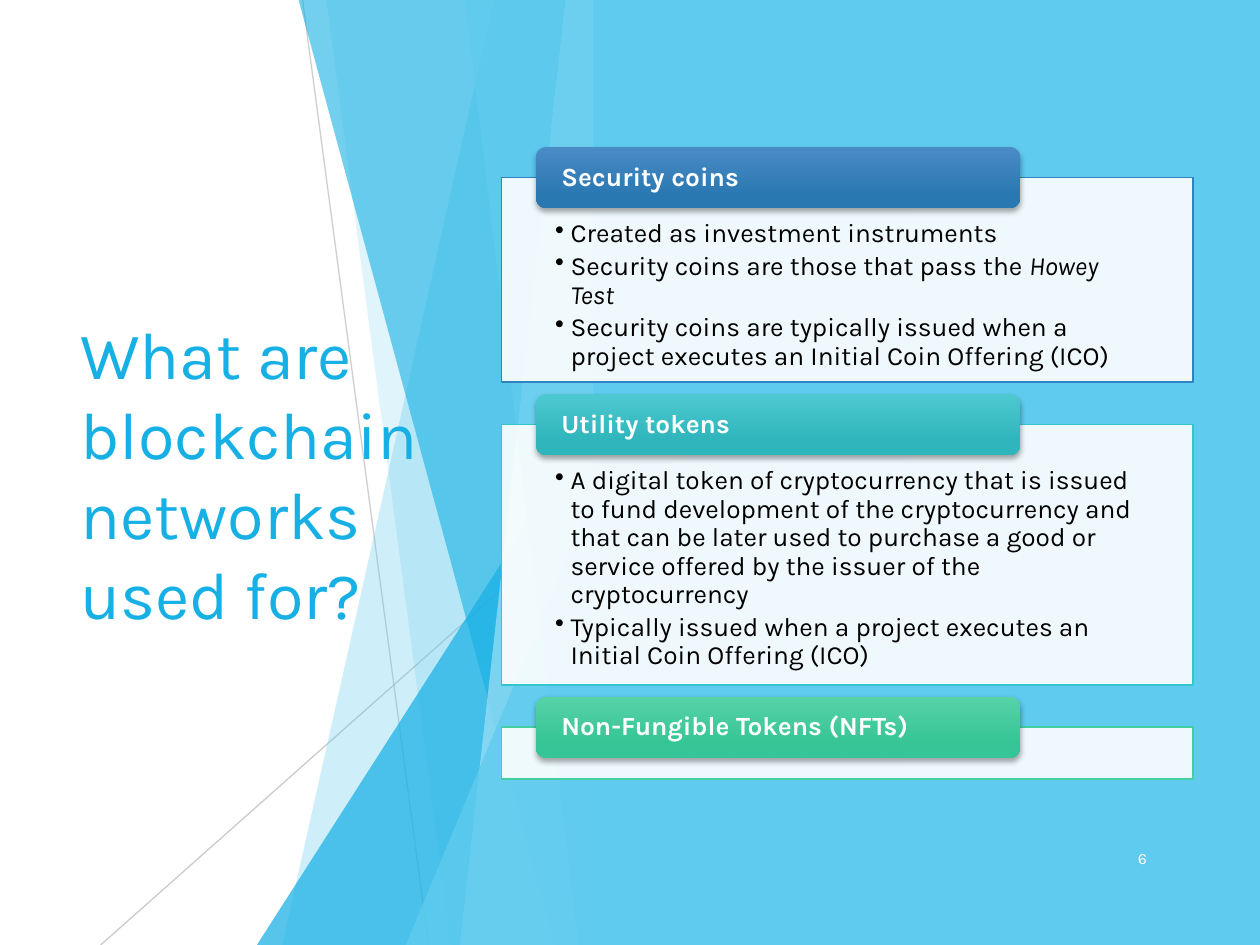
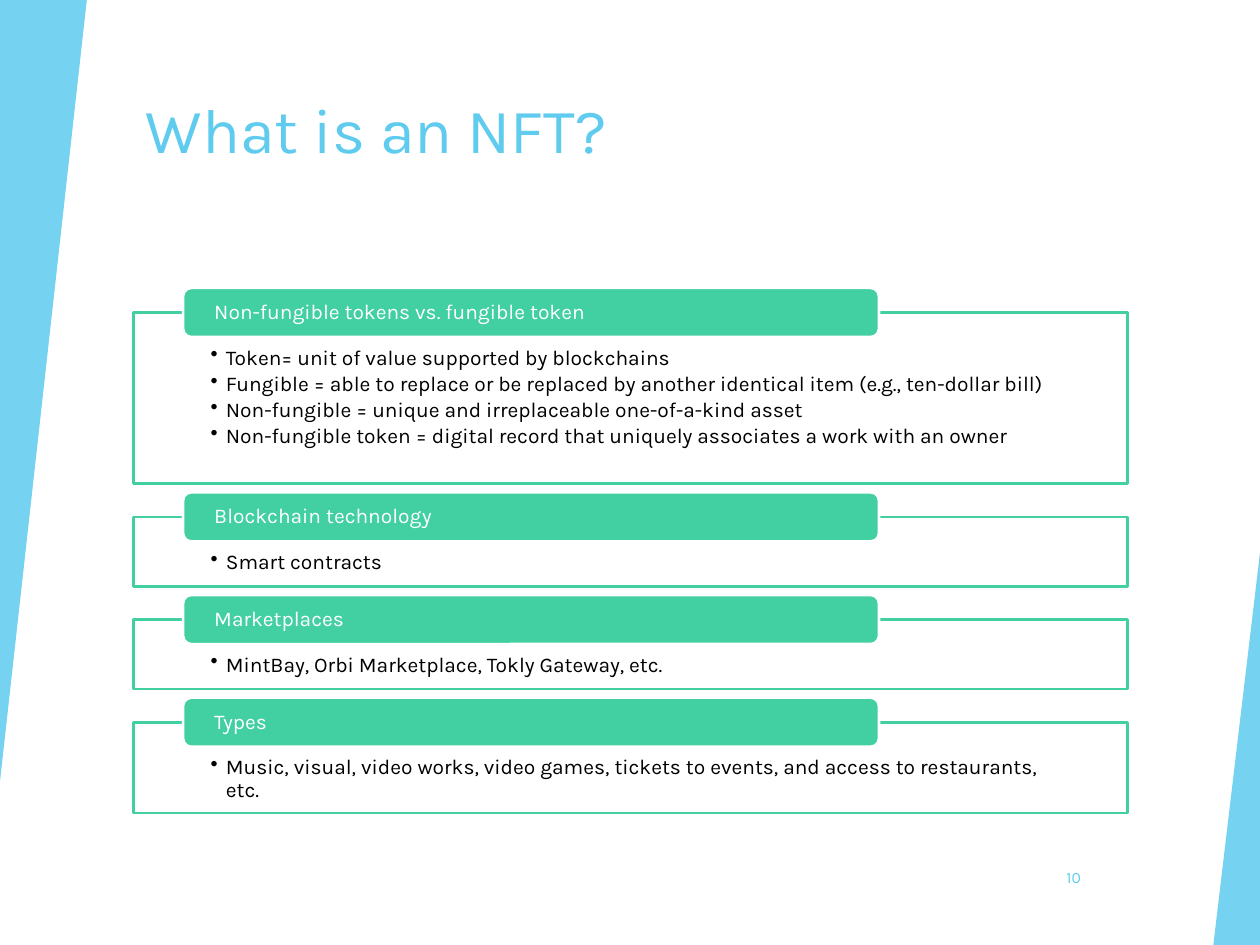
import pptx
import pptx.util
import pptx.dml.color
import pptx.enum.shapes
import pptx.enum.text
import pptx.oxml
import pptx.oxml.ns

Cm = pptx.util.Cm
Pt = pptx.util.Pt
SHAPE = pptx.enum.shapes.MSO_SHAPE
ANCHOR = pptx.enum.text.MSO_ANCHOR
ALIGN = pptx.enum.text.PP_ALIGN
qn = pptx.oxml.ns.qn

# Shared look
FONT = "Karla"
WHITE, BLACK, GREY = "FFFFFF", "000000", "BFBFBF"
SKY, BLUE, PALE, GREEN = "5FCBEF", "17B0E4", "9FE0F5", "42D0A2"
WIDTH, HEIGHT = 25.4, 19.05


def paint(fill, colour, opacity=100):
    """Give a shape, line or font fill a solid colour."""
    fill.solid()
    fill.fore_color.rgb = pptx.dml.color.RGBColor.from_string(colour)
    if opacity < 100:
        colour_element = fill._xPr.find(qn("a:solidFill"))[0]
        alpha = colour_element.makeelement(qn("a:alpha"), {"val": str(opacity * 1000)})
        colour_element.append(alpha)


def write(shape, lines, size, colour, anchor=ANCHOR.MIDDLE, margins=(0.25, 0.13, 0.25, 0.13),
          align=ALIGN.LEFT, bold=False, spacing=1.0, bullets=False):
    """Fill a shape with paragraphs; words between asterisks are italic."""
    frame = shape.text_frame
    frame.word_wrap = True
    frame.vertical_anchor = anchor
    frame.margin_left, frame.margin_top, frame.margin_right, frame.margin_bottom = map(Cm, margins)
    for index, line in enumerate(lines):
        paragraph = frame.paragraphs[0] if index == 0 else frame.add_paragraph()
        paragraph.alignment = align
        paragraph.line_spacing = spacing
        if bullets:
            paragraph.space_after = Pt(size * 0.17)
            properties = paragraph._p.get_or_add_pPr()
            properties.set("marL", str(Cm(0.31)))
            properties.set("indent", str(-Cm(0.31)))
            properties.append(properties.makeelement(qn("a:buChar"), {"char": "•"}))
        paragraph.font.name = FONT
        paragraph.font.size = Pt(size)
        paragraph.font.bold = bold
        paint(paragraph.font.fill, colour)
        for part, words in enumerate(line.split("*")):
            if words:
                run = paragraph.add_run()
                run.text = words
                if part % 2:
                    run.font.italic = True


presentation = pptx.Presentation()
presentation.slide_width, presentation.slide_height = Cm(WIDTH), Cm(HEIGHT)
blank = presentation.slide_layouts[6]
uses_slide = presentation.slides.add_slide(blank)
nft_slide = presentation.slides.add_slide(blank)

# Slide 1: thin lines behind the facets
EDGE = 11.96
for x1, y1, x2, y2, opacity in [(6.1, 0, 8.64, HEIGHT, 75), (EDGE, 10.24, 2.03, HEIGHT, 80)]:
    line = uses_slide.shapes.add_connector(
        pptx.enum.shapes.MSO_CONNECTOR.STRAIGHT, Cm(x1), Cm(y1), Cm(x2), Cm(y2))
    line.line.width = Pt(0.75)
    paint(line.line.fill, GREY, opacity)
    properties = line._element.spPr
    properties.append(properties.makeelement(qn("a:effectLst"), {}))

# Slide 1: facets; a band has top and bottom x, a wedge has left and top
facets = [
    ("band", 9.96, 5.69, SKY, 30),
    ("band", 6.58, 9.09, SKY, 20),
    ("wedge", 5.18, 8.46, BLUE, 72),
    ("band", 6.02, 11.18, BLUE, 60),
    ("band", 11.4, 9.27, PALE, 70),
    ("band", 9.37, 11.66, SKY, 65),
    ("wedge", 8.18, 9.98, SKY, 80),
]
for kind, first, second, colour, opacity in facets:
    if kind == "band":
        builder = uses_slide.shapes.build_freeform(Cm(first), 0)
        corners = [(EDGE, 0), (EDGE, HEIGHT), (second, HEIGHT)]
        builder.add_line_segments([(Cm(x), Cm(y)) for x, y in corners])
        facet = builder.convert_to_shape()
    else:
        facet = uses_slide.shapes.add_shape(
            SHAPE.ISOSCELES_TRIANGLE, Cm(first), Cm(second), Cm(EDGE - first), Cm(HEIGHT - second))
        facet.adjustments[0] = 1
    facet.shadow.inherit = False
    paint(facet.fill, colour, opacity)
    facet.line.fill.background()

# Slide 1: blue field on the right
field = uses_slide.shapes.add_shape(SHAPE.RECTANGLE, Cm(EDGE), 0, Cm(WIDTH - EDGE), Cm(HEIGHT))
field.shadow.inherit = False
paint(field.fill, SKY)
field.line.fill.background()

# Slide 2: wedges on both edges
for left, top, width, height, rotation in [(0, 0, 1.75, 15.75, 180), (24.46, 11.15, 0.94, 7.9, 0)]:
    wedge = nft_slide.shapes.add_shape(
        SHAPE.ISOSCELES_TRIANGLE, Cm(left), Cm(top), Cm(width), Cm(height))
    wedge.adjustments[0] = 1
    wedge.rotation = rotation
    wedge.shadow.inherit = False
    paint(wedge.fill, SKY, 85)
    wedge.line.fill.background()

# Titles and slide numbers
texts = [
    (uses_slide, (1.37, 3.84, 7.39, 11.38), "What are blockchain networks used for?",
     38, BLUE, ANCHOR.MIDDLE, ALIGN.LEFT),
    (uses_slide, (21.95, 16.79, 1.42, 1.02), "6", 9, WHITE, ANCHOR.MIDDLE, ALIGN.RIGHT),
    (nft_slide, (2.69, 1.7, 21.23, 3.05), "What is an NFT?", 36, SKY, ANCHOR.TOP, ALIGN.LEFT),
    (nft_slide, (20.62, 17.17, 1.42, 1.02), "10", 9, SKY, ANCHOR.MIDDLE, ALIGN.RIGHT),
]
for slide, place, words, size, colour, anchor, align in texts:
    box = slide.shapes.add_textbox(*map(Cm, place))
    write(box, [words], size, colour, anchor, align=align)

# Panels: heading, outline, tab colours, height, bullets
coin_panels = [
    ("Security coins", "2E83C3", ("4A8BC6", "2A78B2"), 4.13, [
        "Created as investment instruments",
        "Security coins are those that pass the *Howey Test*",
        "Security coins are typically issued when a project executes an Initial Coin Offering (ICO)"]),
    ("Utility tokens", "34C6CE", ("4DC8D0", "2FB5BC"), 5.25, [
        "A digital token of cryptocurrency that is issued to fund development of the "
        "cryptocurrency and that can be later used to purchase a good or service offered "
        "by the issuer of the cryptocurrency",
        "Typically issued when a project executes an Initial Coin Offering (ICO)"]),
    ("Non-Fungible Tokens (NFTs)", GREEN, ("56D2A7", "36C596"), 1.04, []),
]
nft_panels = [
    ("Non-fungible tokens vs. fungible token", GREEN, (GREEN,), 3.45, [
        "Token= unit of value supported by blockchains",
        "Fungible = able to replace or be replaced by another identical item (e.g., ten-dollar bill)",
        "Non-fungible = unique and irreplaceable one-of-a-kind asset",
        "Non-fungible token = digital record that uniquely associates a work with an owner"]),
    ("Blockchain technology", GREEN, (GREEN,), 1.4, ["Smart contracts"]),
    ("Marketplaces", GREEN, (GREEN,), 1.4, ["MintBay, Orbi Marketplace, Tokly Gateway, etc."]),
    ("Types", GREEN, (GREEN,), 1.83, [
        "Music, visual, video works, video games, tickets to events, and access to restaurants, etc."]),
]

# Panel stacks: left, top, width, tab height, gap, tab margin, text size, outline width
stacks = [
    (uses_slide, coin_panels, 10.11, 3.58, 13.94, 1.23, 0.85, 0.45, 15, 1),
    (nft_slide, nft_panels, 2.69, 6.3, 20.04, 0.99, 0.67, 0.58, 12, 1.5),
]
for slide, panels, left, top, width, tab_height, gap, tab_margin, size, outline_width in stacks:
    for heading, outline, tab_colours, height, bullets in panels:
        panel = slide.shapes.add_shape(SHAPE.RECTANGLE, Cm(left), Cm(top), Cm(width), Cm(height))
        panel.shadow.inherit = False
        paint(panel.fill, WHITE, 90)
        paint(panel.line.fill, outline)
        panel.line.width = Pt(outline_width)
        side = width * 0.0776
        write(panel, bullets, size, BLACK, ANCHOR.TOP,
              (side, tab_height * 0.7, side, tab_height * 0.25), spacing=0.9, bullets=True)

        tab = slide.shapes.add_shape(
            SHAPE.ROUNDED_RECTANGLE, Cm(left + width * 0.05), Cm(top - tab_height / 2),
            Cm(width * 0.7), Cm(tab_height))
        tab.shadow.inherit = False
        raised = len(tab_colours) == 2
        if raised:
            tab.fill.gradient()
            tab.fill.gradient_angle = 270
            for stop, colour, position in zip(tab.fill.gradient_stops, tab_colours, (0, 0.78)):
                stop.color.rgb = pptx.dml.color.RGBColor.from_string(colour)
                stop.position = position
            tab.line.fill.background()
            tab._element.spPr.find(qn("a:effectLst")).append(pptx.oxml.parse_xml(
                f'<a:outerShdw {pptx.oxml.ns.nsdecls("a")} blurRad="{Pt(3)}" dist="{Pt(2)}" '
                'dir="5400000" rotWithShape="0"><a:srgbClr val="000000">'
                '<a:alpha val="35000"/></a:srgbClr></a:outerShdw>'))
        else:
            paint(tab.fill, tab_colours[0])
            paint(tab.line.fill, WHITE)
            tab.line.width = Pt(outline_width)
        write(tab, [heading], size, WHITE, margins=(tab_margin, 0, tab_margin, 0),
              bold=raised, spacing=0.9)
        top += height + gap

presentation.save("out.pptx")
